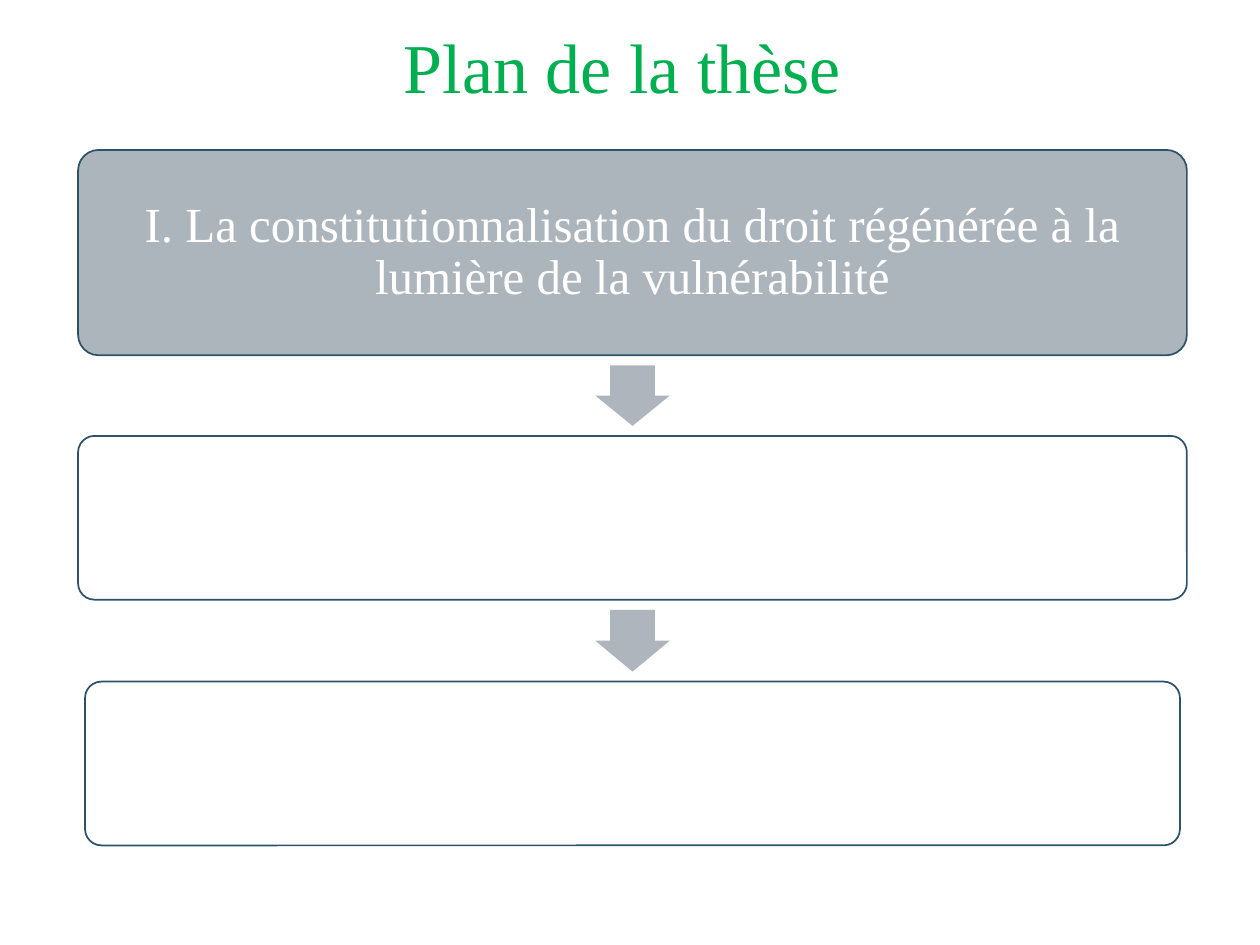
from pptx import Presentation
from pptx.dml.color import RGBColor
from pptx.enum.shapes import MSO_SHAPE
from pptx.enum.text import MSO_ANCHOR, PP_ALIGN
from pptx.util import Inches, Pt

ROUND = MSO_SHAPE.ROUNDED_RECTANGLE
DOWN = MSO_SHAPE.DOWN_ARROW
MIDDLE = MSO_ANCHOR.MIDDLE
CENTER = PP_ALIGN.CENTER

COLORS = {"title": "00B050", "gray": "ADB5BC", "arrow": "AEB5BC",
          "edge": "2E5369", "white": "FFFFFF"}
AXIS = 5.02   # centre line of the boxes and arrows
GAP = 0.08    # space between a box and an arrow

# top, width, height, fill, text
STEPS = [
    (1.19, 8.8, 1.63, "gray", "I. La constitutionnalisation du droit régénérée "
                              "à la lumière de la vulnérabilité"),
    (3.46, 8.8, 1.3, "white", ""),
    (5.41, 8.69, 1.3, None, ""),
]


class Deck:
    """Holds the style and the current slide."""
    face = "Times New Roman"

    def __init__(self, slide):
        self.slide = slide

    def color(self, name):
        return RGBColor.from_string(COLORS[name])

    def label(self, shape, text, size, color):
        frame = shape.text_frame
        frame.text = text
        frame.word_wrap = True
        frame.vertical_anchor = MIDDLE
        para = frame.paragraphs[0]
        para.alignment = CENTER
        para.line_spacing = 0.9
        para.font.name = self.face
        para.font.size = Pt(size)
        para.font.color.rgb = self.color(color)

    def title(self, text, left, top, width, height):
        shape = self.slide.shapes.title
        shape.left, shape.top = Inches(left), Inches(top)
        shape.width, shape.height = Inches(width), Inches(height)
        self.label(shape, text, 40, "title")

    def shape(self, kind, top, width, height, fill):
        """Add a preset shape centred on the axis."""
        shape = self.slide.shapes.add_shape(
            kind, Inches(AXIS - width / 2), Inches(top),
            Inches(width), Inches(height))
        shape.shadow.inherit = False
        if fill:
            shape.fill.solid()
            shape.fill.fore_color.rgb = self.color(fill)
        else:
            shape.fill.background()
        return shape

    def box(self, top, width, height, fill, text):
        shape = self.shape(ROUND, top, width, height, fill)
        shape.adjustments[0] = 0.1
        shape.line.color.rgb = self.color("edge")
        shape.line.width = Pt(1)
        if text:
            frame = shape.text_frame
            frame.margin_left = frame.margin_right = Inches(0.17)
            self.label(shape, text, 28, "white")

    def arrow(self, start, end):
        """Fill the space between two boxes with a down arrow."""
        shape = self.shape(DOWN, start + GAP, 0.59, end - start - 2 * GAP, "arrow")
        shape.adjustments[0] = 0.6
        shape.adjustments[1] = 0.5
        shape.line.fill.background()


def main():
    show = Presentation()
    show.slide_width, show.slide_height = Inches(10), Inches(7.5)
    deck = Deck(show.slides.add_slide(show.slide_layouts[5]))
    deck.title("Plan de la thèse", 0.63, -0.16, 8.62, 1.45)
    for step in STEPS:
        deck.box(*step)
    for upper, lower in zip(STEPS, STEPS[1:]):
        deck.arrow(upper[0] + upper[2], lower[0])
    show.save("out.pptx")


if __name__ == "__main__":
    main()
